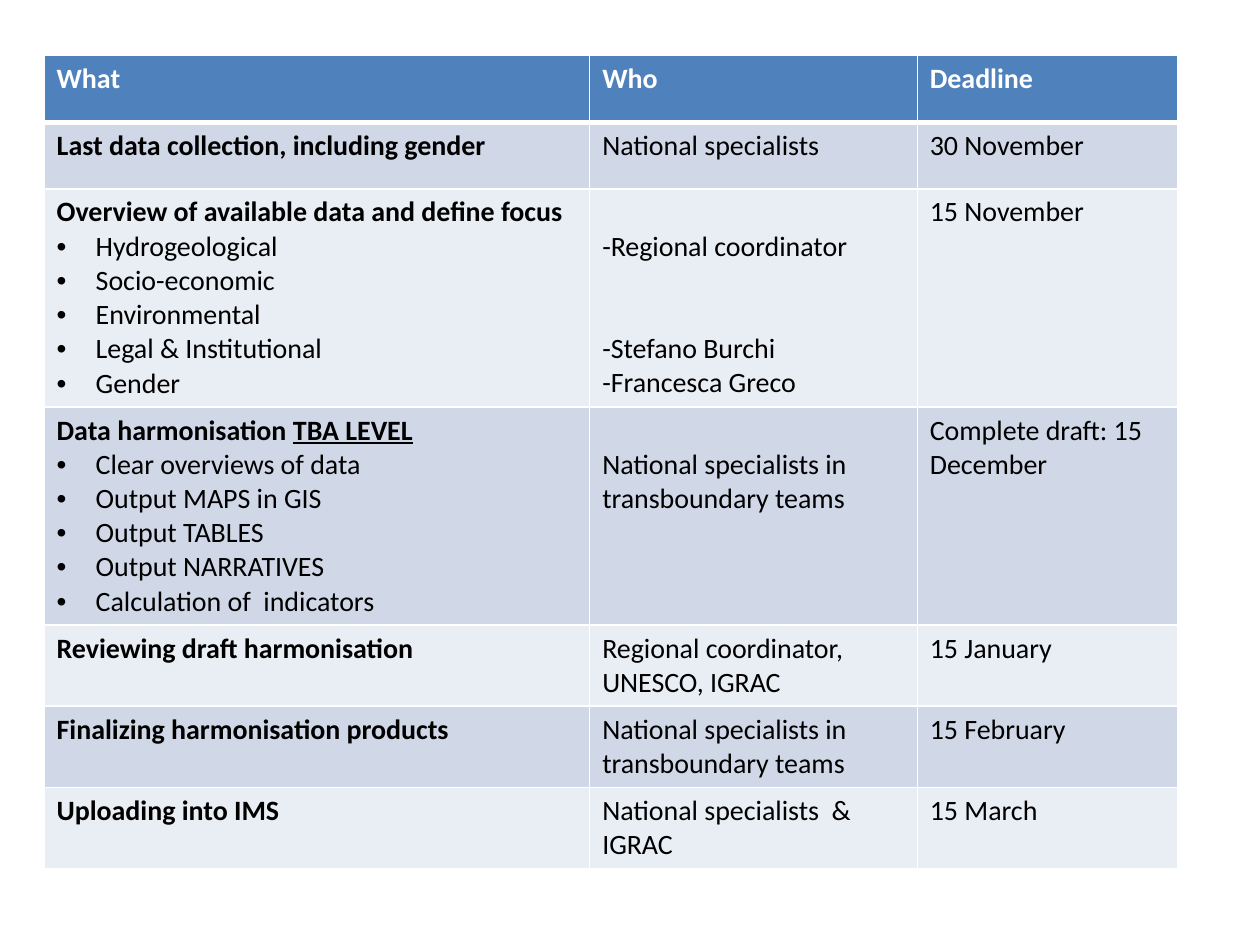
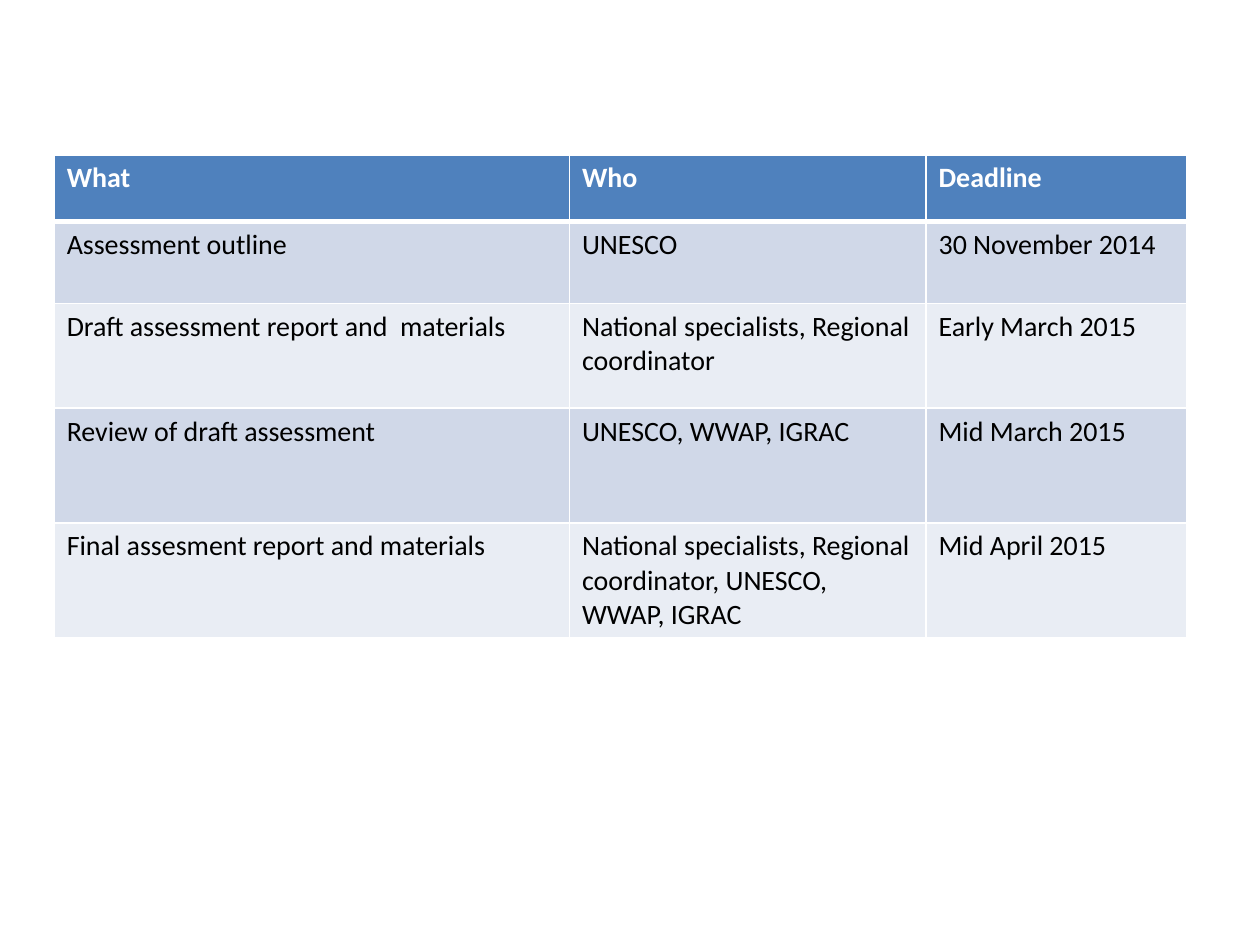
import pptx
import pptx.util
import pptx.dml.color
import pptx.oxml.ns
from lxml import etree

Inches, Pt = pptx.util.Inches, pptx.util.Pt

COLOURS = {"header": "4F81BD", "band_dark": "D0D8E8", "band_light": "E9EDF4",
           "rule": "FFFFFF", "header_text": "FFFFFF", "text": "000000"}
FONT, SIZE = "Calibri", 16
LINE = 19.5  # height of one text line, in points
HANG = 0.31  # bullet indent, in inches

# Content: a cell is a list of paragraphs, each (style, text, blank lines above);
# styles combine b = bold, u = underlined last run, * = bullet
HEADINGS = ["What", "Who", "Deadline"]


def task(heading, *bullets, underlined=""):
    first = {"runs": [(heading, True, False)]}
    if underlined:
        first["runs"].append((underlined, True, True))
    return [first] + [{"runs": [(item, False, False)], "bullet": True} for item in bullets]


def plain(text, skip=0):
    return {"runs": [(text, False, False)], "skip": skip}


HARMONISATION = {
    "at": (0.35, 0.44),
    "columns": [4.33, 2.6, 2.07],
    "heights": [0.53, 0.53, 1.73, 1.73, 0.64, 0.64, 0.64],
    "rows": [
        (task("Last data collection, including gender"),
         [plain("National specialists")], [plain("30 November")]),
        (task("Overview of available data and define focus", "Hydrogeological",
              "Socio-economic", "Environmental", "Legal & Institutional", "Gender"),
         [plain("-Regional coordinator", 1), plain("-Stefano Burchi", 2),
          plain("-Francesca Greco")],
         [plain("15 November")]),
        (task("Data harmonisation ", "Clear overviews of data", "Output MAPS in GIS",
              "Output TABLES", "Output NARRATIVES", "Calculation of  indicators",
              underlined="TBA LEVEL"),
         [plain("National specialists in transboundary teams", 1)],
         [plain("Complete draft: 15 December")]),
        (task("Reviewing draft harmonisation"),
         [plain("Regional coordinator, UNESCO, IGRAC")], [plain("15 January")]),
        (task("Finalizing harmonisation products"),
         [plain("National specialists in transboundary teams")], [plain("15 February")]),
        (task("Uploading into IMS"),
         [plain("National specialists  & IGRAC")], [plain("15 March")]),
    ],
}

ASSESSMENT = {
    "at": (0.43, 1.23),
    "columns": [4.09, 2.83, 2.07],
    "heights": [0.53, 0.65, 0.83, 0.91, 0.91],
    "rows": [[[plain(text)] for text in row] for row in [
        ("Assessment outline", "UNESCO", "30 November 2014"),
        ("Draft assessment report and  materials",
         "National specialists, Regional coordinator", "Early March 2015"),
        ("Review of draft assessment", "UNESCO, WWAP, IGRAC", "Mid March 2015"),
        ("Final assesment report and materials",
         "National specialists, Regional coordinator, UNESCO, WWAP, IGRAC",
         "Mid April 2015"),
    ]],
}


def rgb(name):
    return pptx.dml.color.RGBColor.from_string(COLOURS[name])


def sub(parent, tag, **attributes):
    return etree.SubElement(parent, pptx.oxml.ns.qn(tag), attributes)


def add_borders(cell, top, bottom):
    """White rules on all four sides; they must precede the fill."""
    properties = cell._tc.get_or_add_tcPr()
    widths = [("a:lnL", 1), ("a:lnR", 1), ("a:lnT", top), ("a:lnB", bottom)]
    for place, (tag, width) in enumerate(widths):
        line = sub(properties, tag, w=str(Pt(width)))
        sub(sub(line, "a:solidFill"), "a:srgbClr", val=COLOURS["rule"])
        properties.insert(place, line)


def write_cell(cell, paragraphs, colour):
    frame = cell.text_frame
    for number, content in enumerate(paragraphs):
        paragraph = frame.add_paragraph() if number else frame.paragraphs[0]
        if content.get("bullet"):
            properties = paragraph._p.get_or_add_pPr()
            properties.set("marL", str(Inches(HANG)))
            properties.set("indent", str(-Inches(HANG)))
            sub(properties, "a:buFont", typeface="Arial")
            sub(properties, "a:buChar", char="•")
        # Skipped lines become a top margin or space before
        gap = Pt(LINE * content.get("skip", 0))
        if gap and number:
            paragraph.space_before = gap
        elif gap:
            cell.margin_top = Inches(0.05) + gap
        for text, bold, underline in content["runs"]:
            run = paragraph.add_run()
            run.text = text
            run.font.name, run.font.size = FONT, Pt(SIZE)
            run.font.bold, run.font.underline = bold, underline
            run.font.color.rgb = rgb(colour)


def add_schedule(deck, schedule):
    slide = deck.slides.add_slide(deck.slide_layouts[6])
    rows = [[task(heading) for heading in HEADINGS]] + schedule["rows"]
    left, top = schedule["at"]
    table = slide.shapes.add_table(
        len(rows), len(HEADINGS), Inches(left), Inches(top),
        Inches(sum(schedule["columns"])), Inches(sum(schedule["heights"]))).table
    table.first_row = table.horz_banding = False
    for column, width in zip(table.columns, schedule["columns"]):
        column.width = Inches(width)
    for number, (row, height) in enumerate(zip(rows, schedule["heights"])):
        table.rows[number].height = Inches(height)
        band = "header" if number == 0 else ("band_light", "band_dark")[number % 2]
        for position, paragraphs in enumerate(row):
            cell = table.cell(number, position)
            cell.fill.solid()
            cell.fill.fore_color.rgb = rgb(band)
            add_borders(cell, top=3 if number == 1 else 1, bottom=3 if number == 0 else 1)
            write_cell(cell, paragraphs, "text" if number else "header_text")


def main():
    deck = pptx.Presentation()
    deck.slide_width, deck.slide_height = Inches(10), Inches(7.5)
    for schedule in (HARMONISATION, ASSESSMENT):
        add_schedule(deck, schedule)
    deck.save("out.pptx")


if __name__ == "__main__":
    main()
